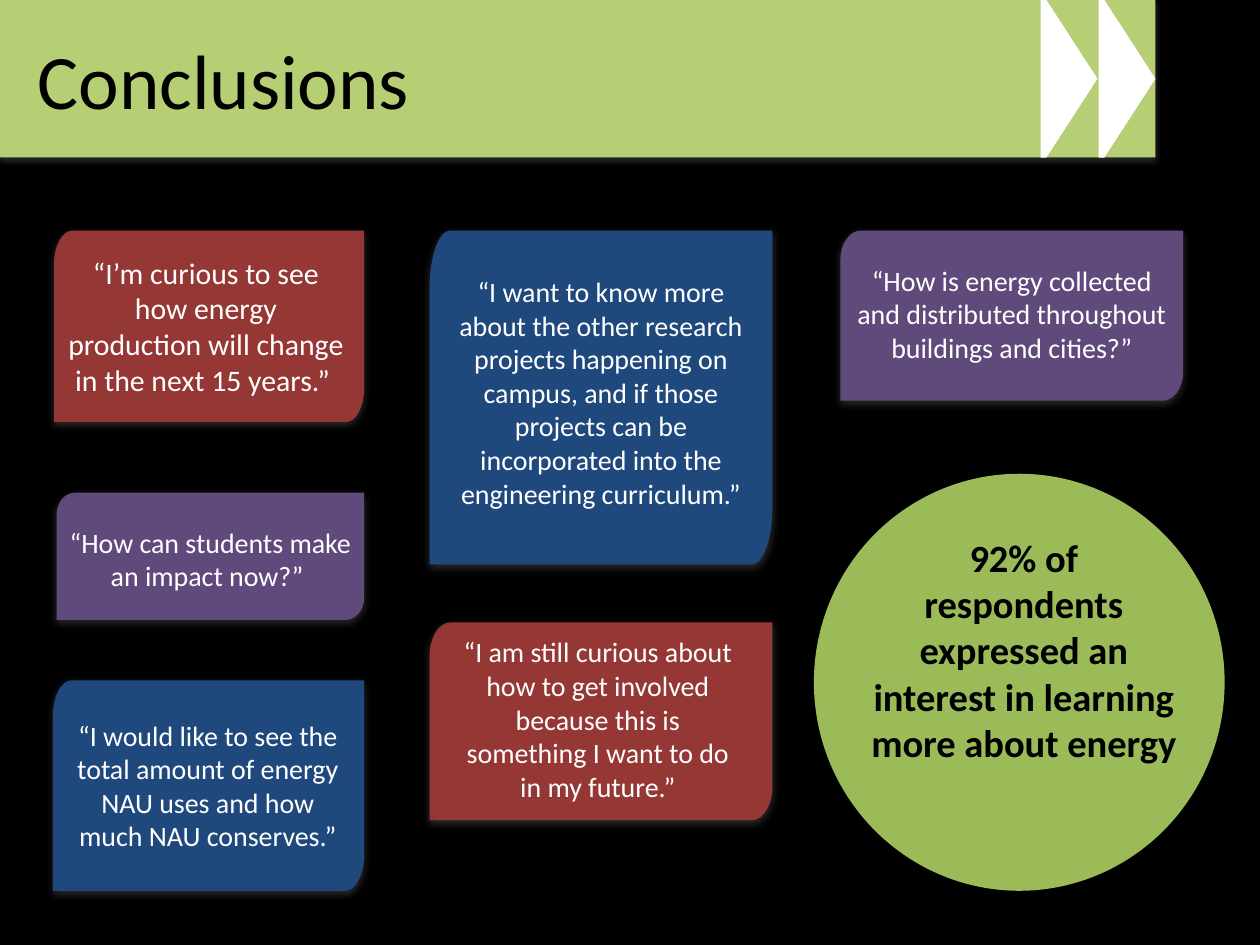
from lxml import etree
from pptx import Presentation
from pptx.dml.color import RGBColor
from pptx.enum.shapes import MSO_SHAPE
from pptx.enum.text import MSO_ANCHOR, MSO_AUTO_SIZE, PP_ALIGN
from pptx.oxml.ns import qn
from pptx.util import Inches, Pt

RECTANGLE, OVAL, PENTAGON = MSO_SHAPE.RECTANGLE, MSO_SHAPE.OVAL, MSO_SHAPE.PENTAGON
TOP, MIDDLE = MSO_ANCHOR.TOP, MSO_ANCHOR.MIDDLE
LEFT, CENTER = PP_ALIGN.LEFT, PP_ALIGN.CENTER
GROW, FIXED = MSO_AUTO_SIZE.SHAPE_TO_FIT_TEXT, MSO_AUTO_SIZE.NONE

FONT = "Calibri"
BLACK, WHITE = "000000", "FFFFFF"
RED, BLUE, PURPLE = "953735", "1F497D", "604A7B"
BANNER_GREEN, CIRCLE_GREEN = "B6CF75", "9BBB59"
CORNER_WIDTH, CORNER_HEIGHT = 0.06, 0.17
ARC_PULL = 0.55

QUOTES = [
    (PURPLE, (0.45, 3.91, 2.44, 1.01), (0.35, 4.12, 2.64, 0.64), 16,
     "“How can students make an impact now?” "),
    (BLUE, (0.42, 5.4, 2.47, 1.67), (0.45, 5.65, 2.4, 1.43), 16,
     "“I would like to see the total amount of energy NAU uses and how much NAU conserves.”"),
    (RED, (3.41, 4.94, 2.72, 1.57), (3.53, 4.99, 2.43, 1.45), 16,
     "“I am still curious about how to get involved because this is something "
     "I want to do in my future.”"),
    (PURPLE, (6.67, 1.83, 2.72, 1.35), (6.67, 2.04, 2.72, 0.91), 16,
     "“How is energy collected and distributed throughout buildings and cities?”"),
    (RED, (0.43, 1.83, 2.46, 1.52), (0.42, 1.97, 2.43, 1.25), 17,
     "“I’m curious to see how energy production will change in the next 15 years.” "),
    (BLUE, (3.41, 1.83, 2.72, 2.65), (3.46, 2.13, 2.62, 1.99), 16,
     "“I want to know more about the other research projects happening on campus, "
     "and if those projects can be incorporated into the engineering curriculum.”"),
]


def rgb(color):
    """Turn a hex string into a colour."""
    return RGBColor.from_string(color)


def paint(shape, color):
    """Give a shape a plain fill with no line and no shadow."""
    shape.fill.solid()
    shape.fill.fore_color.rgb = rgb(color)
    shape.line.fill.background()
    shape.shadow.inherit = False


def add_shadow(shape, blur):
    """Cast a soft grey shadow straight down from a painted shape."""
    effects = shape._element.spPr.find(qn("a:effectLst"))
    shadow = etree.SubElement(effects, qn("a:outerShdw"), blurRad=str(Pt(blur)),
                              dist=str(Pt(1.8)), dir="5400000", rotWithShape="0")
    tint = etree.SubElement(shadow, qn("a:srgbClr"), val="808080")
    etree.SubElement(tint, qn("a:alpha"), val="35000")


def add_preset(slide, preset, box, color):
    """Add a painted preset shape."""
    shape = slide.shapes.add_shape(preset, *map(Inches, box))
    paint(shape, color)
    return shape


def round_corner(segment, start, corner, end):
    """Turn a straight outline segment into a curve that bends toward a corner."""
    segment.tag = qn("a:cubicBezTo")
    segment.clear()
    pulls = [[int(p + ARC_PULL * (c - p)) for p, c in zip(point, corner)]
             for point in (start, end)]
    for x, y in (*pulls, end):
        etree.SubElement(segment, qn("a:pt"), x=str(x), y=str(y))


def add_card(slide, box, color):
    """Add a card whose top-left and bottom-right corners are rounded."""
    left, top, width, height = map(Inches, box)
    rx, ry = int(width * CORNER_WIDTH), int(height * CORNER_HEIGHT)
    outline = [(rx, 0), (width, 0), (width, height - ry), (width - rx, height),
               (0, height), (0, ry), (rx, 0)]
    builder = slide.shapes.build_freeform(*outline[0])
    builder.add_line_segments(outline[1:], close=True)
    card = builder.convert_to_shape(left, top)
    segments = list(card._element.iter(qn("a:lnTo")))
    for end, corner in ((3, (width, height)), (6, (0, 0))):
        round_corner(segments[end - 1], outline[end - 1], corner, outline[end])
    paint(card, color)
    add_shadow(card, 5)


def add_text(slide, box, text, size, color, bold=False, align=CENTER, anchor=TOP, fit=GROW):
    """Add one wrapped paragraph of text."""
    frame = slide.shapes.add_textbox(*map(Inches, box)).text_frame
    frame.word_wrap = True
    frame.auto_size = fit
    frame.vertical_anchor = anchor
    paragraph = frame.paragraphs[0]
    paragraph.alignment = align
    run = paragraph.add_run()
    run.text = text
    run.font.name = FONT
    run.font.size = Pt(size)
    run.font.bold = bold
    run.font.color.rgb = rgb(color)


def add_banner(slide):
    """Add the title banner with its two arrows."""
    banner = add_preset(slide, RECTANGLE, (0, 0, 9.17, 1.25), BANNER_GREEN)
    add_shadow(banner, 3.1)
    add_text(slide, (0.2, 0, 9, 1.25), "Conclusions", 44, BLACK,
             align=LEFT, anchor=MIDDLE, fit=FIXED)
    for left in (8.26, 8.72):
        arrow = add_preset(slide, PENTAGON, (left, 0, 0.45, 1.25), WHITE)
        arrow.adjustments[0] = 0.9


def main():
    """Build and save the conclusions slide."""
    deck = Presentation()
    deck.slide_width, deck.slide_height = Inches(10), Inches(7.5)
    slide = deck.slides.add_slide(deck.slide_layouts[6])
    slide.background.fill.solid()
    slide.background.fill.fore_color.rgb = rgb(BLACK)

    for color, card_box, text_box, size, quote in QUOTES:
        add_card(slide, card_box, color)
        add_text(slide, text_box, quote, size, WHITE)
    add_preset(slide, OVAL, (6.46, 3.76, 3.26, 3.31), CIRCLE_GREEN)
    add_text(slide, (6.8, 4.19, 2.65, 2.63),
             "92% of respondents expressed an interest in learning more about energy ",
             22, BLACK, bold=True)
    add_banner(slide)
    deck.save("out.pptx")


if __name__ == "__main__":
    main()
